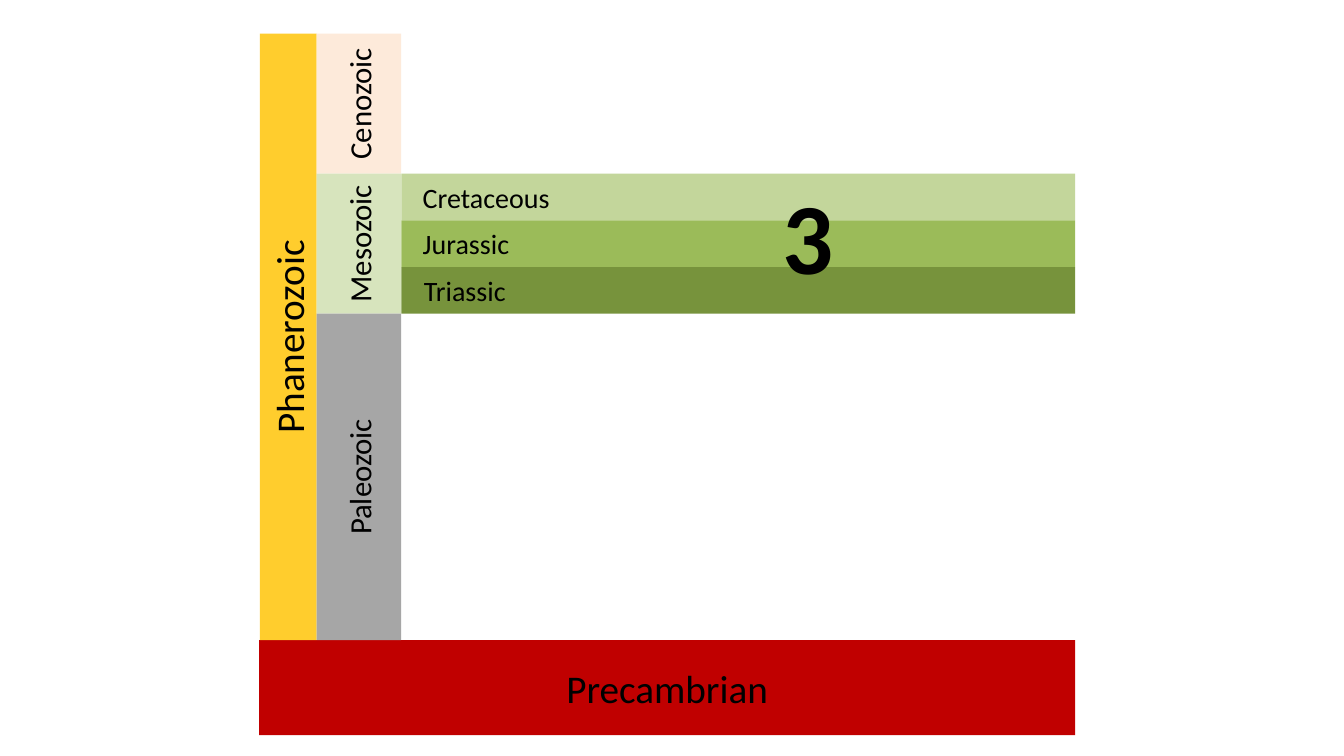
from dataclasses import dataclass

from pptx import Presentation
from pptx.dml.color import RGBColor as RGB
from pptx.enum.shapes import MSO_SHAPE as SHAPE
from pptx.enum.text import MSO_ANCHOR as ANCHOR, PP_ALIGN as ALIGN
from pptx.util import Pt


@dataclass(frozen=True)
class Theme:
    font: str = "Calibri"
    text: str = "000000"
    phanerozoic: str = "FFCD2D"
    precambrian: str = "C00000"
    cenozoic: str = "FDEADA"
    mesozoic: str = "D7E4BD"
    paleozoic: str = "A6A6A6"
    cretaceous: str = "C3D69B"
    jurassic: str = "9BBB59"
    triassic: str = "77933C"
    eon_size: int = 28
    era_size: int = 22
    period_size: int = 20
    number_size: int = 72


THEME = Theme()


def write(sp, text, size, bold=False, align=ALIGN.CENTER, **frame):
    tf = sp.text_frame
    for name, value in frame.items():
        setattr(tf, name, value)
    p = tf.paragraphs[0]
    p.alignment = align
    r = p.add_run()
    r.text = text
    for name, value in dict(name=THEME.font, size=Pt(size), bold=bold).items():
        setattr(r.font, name, value)
    r.font.color.rgb = RGB.from_string(THEME.text)


def add_block(slide, box, name, size, upright=False, **text_format):
    """Coloured block; the text of an upright one reads from bottom to top."""
    sp = slide.shapes.add_shape(SHAPE.RECTANGLE, *map(Pt, box))
    sp.shadow.inherit = False
    sp.fill.solid()
    sp.fill.fore_color.rgb = RGB.from_string(getattr(THEME, name.lower()))
    sp.line.fill.background()
    write(sp, name, size, vertical_anchor=ANCHOR.MIDDLE, word_wrap=True, **text_format)
    if upright:
        sp.element.txBody.bodyPr.set("vert", "vert270")


def add_periods(slide, box):
    x, y, w, h = box
    indents = {"Cretaceous": 15.3, "Jurassic": 15.3, "Triassic": 16.2}
    row = h / len(indents)
    for i, (name, indent) in enumerate(indents.items()):
        add_block(slide, (x, y + i * row, w, row), name, THEME.period_size,
                  align=ALIGN.LEFT, margin_left=Pt(indent))
    # Number of periods
    sp = slide.shapes.add_textbox(Pt(x + 265.6), Pt(y - 3.4), Pt(102), Pt(94.3))
    write(sp, str(len(indents)), THEME.number_size, bold=True,
          align=ALIGN.LEFT, word_wrap=True)


def add_timescale(slide, box):
    x, y, w, h = box
    eon_w, era_w, precambrian_h = 41, 60.4, 67.8
    phanerozoic_h = h - precambrian_h
    era_x = x + eon_w
    period_x = era_x + era_w

    # Eons
    add_block(slide, (x, y + phanerozoic_h, w, precambrian_h),
              "Precambrian", THEME.eon_size)
    add_block(slide, (x + 0.5, y, eon_w - 0.5, phanerozoic_h),
              "Phanerozoic", THEME.eon_size, upright=True)

    # Eras, with the Mesozoic periods beside their era
    era_y = y
    for name, era_h in (("Cenozoic", 100), ("Mesozoic", 100),
                        ("Paleozoic", phanerozoic_h - 200)):
        add_block(slide, (era_x, era_y, era_w, era_h), name,
                  THEME.era_size, upright=True)
        if name == "Mesozoic":
            add_periods(slide, (period_x, era_y, x + w - period_x, era_h))
        era_y += era_h


def main():
    prs = Presentation()
    prs.slide_width, prs.slide_height = Pt(960), Pt(540)
    slide = prs.slides.add_slide(prs.slide_layouts[6])
    add_timescale(slide, (185.2, 24.1, 582.8, 501))
    prs.save("out.pptx")


if __name__ == "__main__":
    main()
